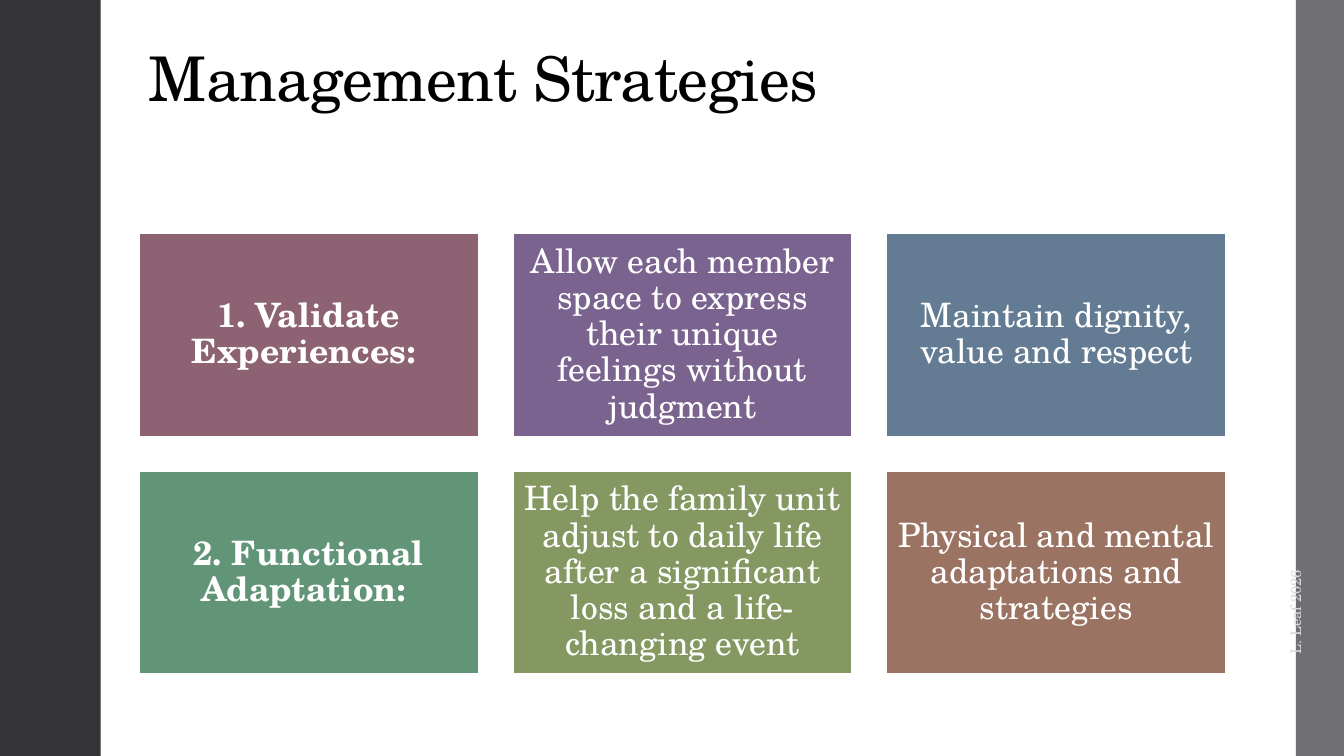
from pptx import Presentation
from pptx.dml.color import RGBColor as RGB
from pptx.enum.shapes import MSO_SHAPE as Shape
from pptx.enum.text import MSO_ANCHOR as Anchor, PP_ALIGN as Align
from pptx.util import Cm, Pt

# Colours and font
WHITE = RGB(0xFF, 0xFF, 0xFF)
BLACK = RGB(0x00, 0x00, 0x00)
DARK = RGB(0x35, 0x35, 0x37)
GREY = RGB(0x6F, 0x6F, 0x74)
PALE = RGB(0xD9, 0xD9, 0xDB)
ROSE = RGB(0x8D, 0x63, 0x74)
PLUM = RGB(0x7B, 0x63, 0x90)
BLUE = RGB(0x63, 0x7C, 0x93)
GREEN = RGB(0x62, 0x95, 0x78)
OLIVE = RGB(0x85, 0x98, 0x62)
BROWN = RGB(0x9B, 0x73, 0x62)
FACE = "TeX Gyre Schola"

# Content
TITLE = "Management Strategies"
FOOTER = "L. Leaf 2026"
ROWS = [
    [("1. Validate Experiences: ", ROSE),
     ("Allow each member space to express their unique feelings without judgment", PLUM),
     ("Maintain dignity, value and respect", BLUE)],
    [("2. Functional Adaptation: ", GREEN),
     ("Help the family unit adjust to daily life after a significant loss "
      "and a life-changing event", OLIVE),
     ("Physical and mental adaptations and strategies", BROWN)],
]

# Layout in centimetres
WIDE, HIGH = 33.87, 19.05
LEFT, TOP = 3.5, 5.87
CARD_W, CARD_H, GAP = 8.56, 5.13, 0.86
BARS = [(0, 2.54, DARK), (32.66, WIDE - 32.66, GREY)]

# Text formats
INSET = Cm(0.25)
HEAD = dict(size=Pt(44), bold=False, color=BLACK)
BODY = dict(size=Pt(24), bold=False, color=WHITE)
NOTE = dict(size=Pt(10.5), bold=False, color=PALE)


def put(shape, text, look, align, anchor, space=0.9, pad=INSET):
    frame = shape.text_frame
    frame.text = text
    values = dict(word_wrap=True, vertical_anchor=anchor, margin_left=INSET,
                  margin_right=INSET, margin_top=pad, margin_bottom=pad)
    for key, value in values.items():
        setattr(frame, key, value)
    para = frame.paragraphs[0]
    para.alignment, para.line_spacing = align, space
    font = para.runs[0].font
    font.name = FACE
    for key, value in look.items():
        if key == "color":
            font.color.rgb = value
        else:
            setattr(font, key, value)
    return para.runs[0]


def block(slide, x, y, w, h, fill):
    shape = slide.shapes.add_shape(Shape.RECTANGLE, Cm(x), Cm(y), Cm(w), Cm(h))
    shape.shadow.inherit = False
    shape.fill.solid()
    shape.fill.fore_color.rgb = fill
    shape.line.fill.background()
    return shape


def main():
    deck = Presentation()
    deck.slide_width, deck.slide_height = Cm(WIDE), Cm(HIGH)
    slide = deck.slides.add_slide(deck.slide_layouts[5])

    # Title
    title = slide.shapes.title
    place = dict(left=Cm(LEFT), top=Cm(1.02), width=Cm(27.38), height=Cm(3.68))
    for key, value in place.items():
        setattr(title, key, value)
    run = put(title, TITLE, HEAD, Align.LEFT, Anchor.TOP, pad=Cm(0.2))
    run.font._element.set("spc", "-50")

    # Side bars
    for x, w, fill in BARS:
        block(slide, x, 0, w, HIGH, fill)

    # Card grid, first column bold
    for i, row in enumerate(ROWS):
        for j, (text, fill) in enumerate(row):
            x = LEFT + j * (CARD_W + GAP)
            y = TOP + i * (CARD_H + GAP)
            card = block(slide, x, y, CARD_W, CARD_H, fill)
            card.line.color.rgb = WHITE
            card.line.width = Pt(1.35)
            put(card, text, BODY | dict(bold=j == 0), Align.CENTER, Anchor.MIDDLE)

    # Footer along the right edge
    foot = slide.shapes.add_textbox(Cm(27.66), Cm(11.25), Cm(9.96), Cm(1.02))
    foot.rotation = 270
    put(foot, FOOTER, NOTE, Align.LEFT, Anchor.MIDDLE, space=1.0, pad=Cm(0.13))

    deck.save("out.pptx")


if __name__ == "__main__":
    main()
